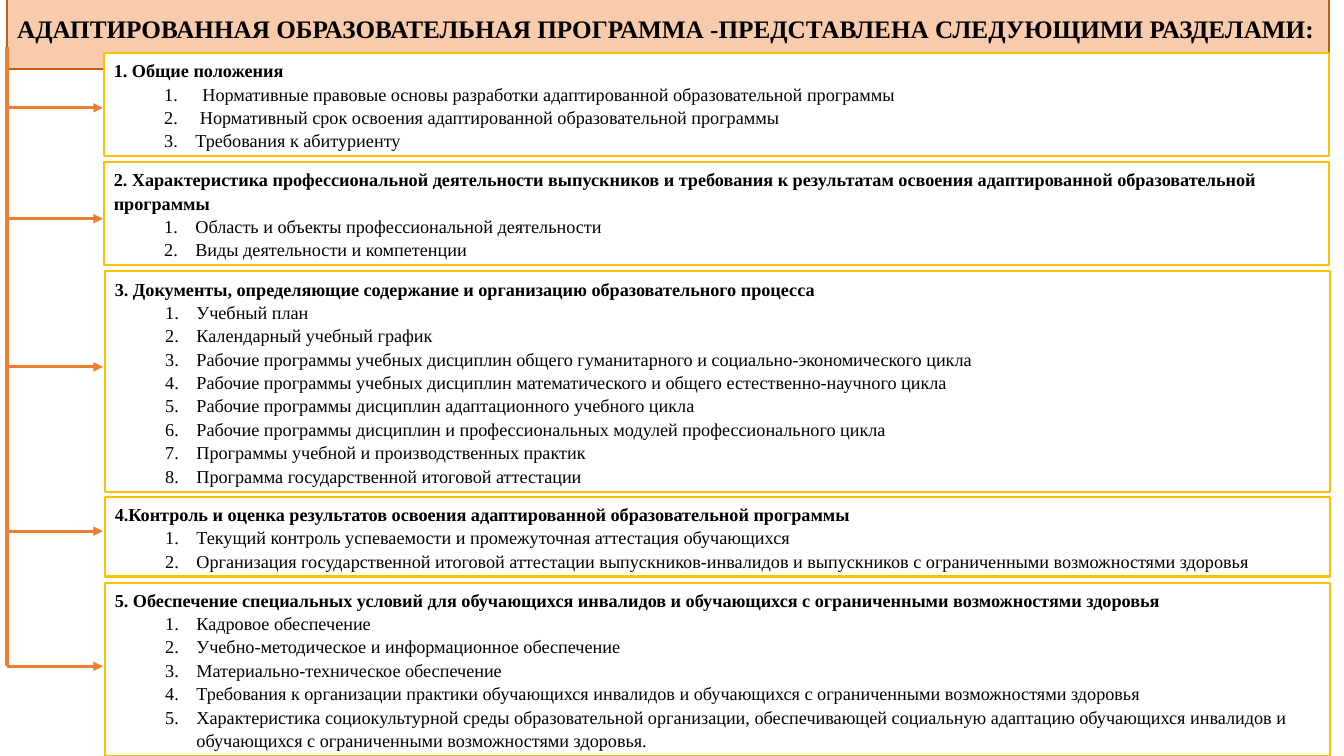
from dataclasses import dataclass

from lxml.etree import SubElement
from pptx import Presentation
from pptx.dml.color import RGBColor
from pptx.enum.shapes import MSO_CONNECTOR, MSO_SHAPE
from pptx.enum.text import MSO_ANCHOR, MSO_AUTO_SIZE, PP_ALIGN
from pptx.oxml.ns import qn
from pptx.util import Inches, Pt

FONT = "Times New Roman"
BLACK, WHITE = "000000", "FFFFFF"
PEACH, BROWN, GOLD, ORANGE = "F8CBAD", "C55A11", "FFC000", "ED7D31"
TRUNK_LEFT, TRUNK_TOP = 0.07, 0.47
ARROW_END = 1.02
SECTION_WIDTH = 12.15
ITEM_INDENT, ITEM_HANGING = 0.81, 0.31


@dataclass
class Section:
    left: float
    top: float
    height: float
    arrow_y: float
    heading: str
    items: list[str]
    first_extra: float = 0  # additional indent of the first item


SECTIONS = [
    Section(1.03, 0.53, 1.02, 1.07, "1. Общие положения", [
        "Нормативные правовые основы разработки адаптированной образовательной программы",
        " Нормативный срок освоения адаптированной образовательной программы",
        "Требования к абитуриенту",
    ], first_extra=0.07),
    Section(1.03, 1.61, 1.02, 2.17,
            "2. Характеристика профессиональной деятельности выпускников и требования "
            "к результатам освоения адаптированной образовательной программы", [
                "Область и объекты профессиональной деятельности",
                "Виды деятельности и компетенции",
            ]),
    Section(1.04, 2.69, 2.19, 3.64,
            "3. Документы, определяющие содержание и организацию образовательного процесса", [
                "Учебный план",
                "Календарный учебный график",
                "Рабочие программы учебных дисциплин общего гуманитарного и социально-экономического цикла",
                "Рабочие программы учебных дисциплин математического и общего естественно-научного цикла",
                "Рабочие программы дисциплин адаптационного учебного цикла",
                "Рабочие программы дисциплин и профессиональных модулей профессионального цикла",
                "Программы учебной и производственных практик",
                "Программа государственной итоговой аттестации",
            ]),
    Section(1.04, 4.93, 0.79, 5.27,
            "4.Контроль и оценка результатов освоения адаптированной образовательной программы", [
                "Текущий контроль успеваемости и промежуточная аттестация обучающихся",
                "Организация государственной итоговой аттестации выпускников-инвалидов "
                "и выпускников с ограниченными возможностями здоровья",
            ]),
    Section(1.04, 5.78, 1.72, 6.61,
            "5. Обеспечение специальных условий для обучающихся инвалидов "
            "и обучающихся с ограниченными возможностями здоровья", [
                "Кадровое обеспечение",
                "Учебно-методическое и информационное обеспечение",
                "Материально-техническое обеспечение",
                "Требования к организации практики обучающихся инвалидов "
                "и обучающихся с ограниченными возможностями здоровья",
                "Характеристика социокультурной среды образовательной организации, "
                "обеспечивающей социальную адаптацию обучающихся инвалидов "
                "и обучающихся с ограниченными возможностями здоровья.",
            ]),
]


def color(value: str) -> RGBColor:
    return RGBColor.from_string(value)


def apply(target, values: dict) -> None:
    for name, value in values.items():
        setattr(target, name, value)


def format_box(box, left: float, top: float, width: float, height: float,
               fill: str, line: str) -> None:
    apply(box, {"left": Inches(left), "top": Inches(top),
                "width": Inches(width), "height": Inches(height)})
    box.fill.solid()
    box.fill.fore_color.rgb = color(fill)
    box.line.color.rgb = color(line)
    box.line.width = Pt(1.5)
    apply(box.text_frame, {
        "word_wrap": True, "auto_size": MSO_AUTO_SIZE.SHAPE_TO_FIT_TEXT,
        "vertical_anchor": MSO_ANCHOR.MIDDLE,
        "margin_left": Inches(0.1), "margin_right": Inches(0.1),
        "margin_top": Inches(0.05), "margin_bottom": Inches(0.05)})


def write(para, text: str, size: float, bold: bool, align=PP_ALIGN.LEFT) -> None:
    apply(para, {"alignment": align, "line_spacing": 1.07,
                 "space_before": Pt(0), "space_after": Pt(0)})
    span = para.add_run()
    span.text = text
    apply(span.font, {"name": FONT, "size": Pt(size), "bold": bold})
    span.font.color.rgb = color(BLACK)


def number(para, extra: float) -> None:
    para.level = 1
    properties = para._p.get_or_add_pPr()
    properties.set("marL", str(Inches(ITEM_INDENT + extra)))
    properties.set("indent", str(-Inches(ITEM_HANGING + extra)))
    SubElement(properties, qn("a:buFont"), typeface="+mj-lt")
    SubElement(properties, qn("a:buAutoNum"), type="arabicPeriod")


def add_section(slide, section: Section) -> None:
    box = slide.shapes.add_shape(MSO_SHAPE.RECTANGLE, 0, 0, 0, 0)
    box.shadow.inherit = False
    format_box(box, section.left, section.top, SECTION_WIDTH, section.height, WHITE, GOLD)
    write(box.text_frame.paragraphs[0], section.heading, 13, True)
    for index, item in enumerate(section.items):
        para = box.text_frame.add_paragraph()
        write(para, item, 13, False)
        number(para, section.first_extra if index == 0 else 0)


def add_line(slide, x1: float, y1: float, x2: float, y2: float, arrow: bool) -> None:
    connector = slide.shapes.add_connector(
        MSO_CONNECTOR.STRAIGHT, Inches(x1), Inches(y1), Inches(x2), Inches(y2))
    connector.line.color.rgb = color(ORANGE)
    connector.line.width = Pt(2.25)
    if arrow:
        SubElement(connector.line._get_or_add_ln(), qn("a:tailEnd"), type="triangle")
    SubElement(connector._element.spPr, qn("a:effectLst"))


def main() -> None:
    deck = Presentation()
    deck.slide_width, deck.slide_height = Inches(13.33), Inches(7.5)
    slide = deck.slides.add_slide(deck.slide_layouts[5])

    # Title bar
    title = slide.shapes.title
    format_box(title, 0.07, 0.07, 13.11, 0.4, PEACH, BROWN)
    write(title.text_frame.paragraphs[0],
          "АДАПТИРОВАННАЯ ОБРАЗОВАТЕЛЬНАЯ ПРОГРАММА -ПРЕДСТАВЛЕНА СЛЕДУЮЩИМИ РАЗДЕЛАМИ:",
          18, True, PP_ALIGN.JUSTIFY)

    # Programme sections
    for section in SECTIONS:
        add_section(slide, section)

    # Trunk line with an arrow to each section
    add_line(slide, TRUNK_LEFT, TRUNK_TOP, TRUNK_LEFT, SECTIONS[-1].arrow_y, False)
    for section in SECTIONS:
        add_line(slide, TRUNK_LEFT, section.arrow_y, ARROW_END, section.arrow_y, True)

    deck.save("out.pptx")


if __name__ == "__main__":
    main()
